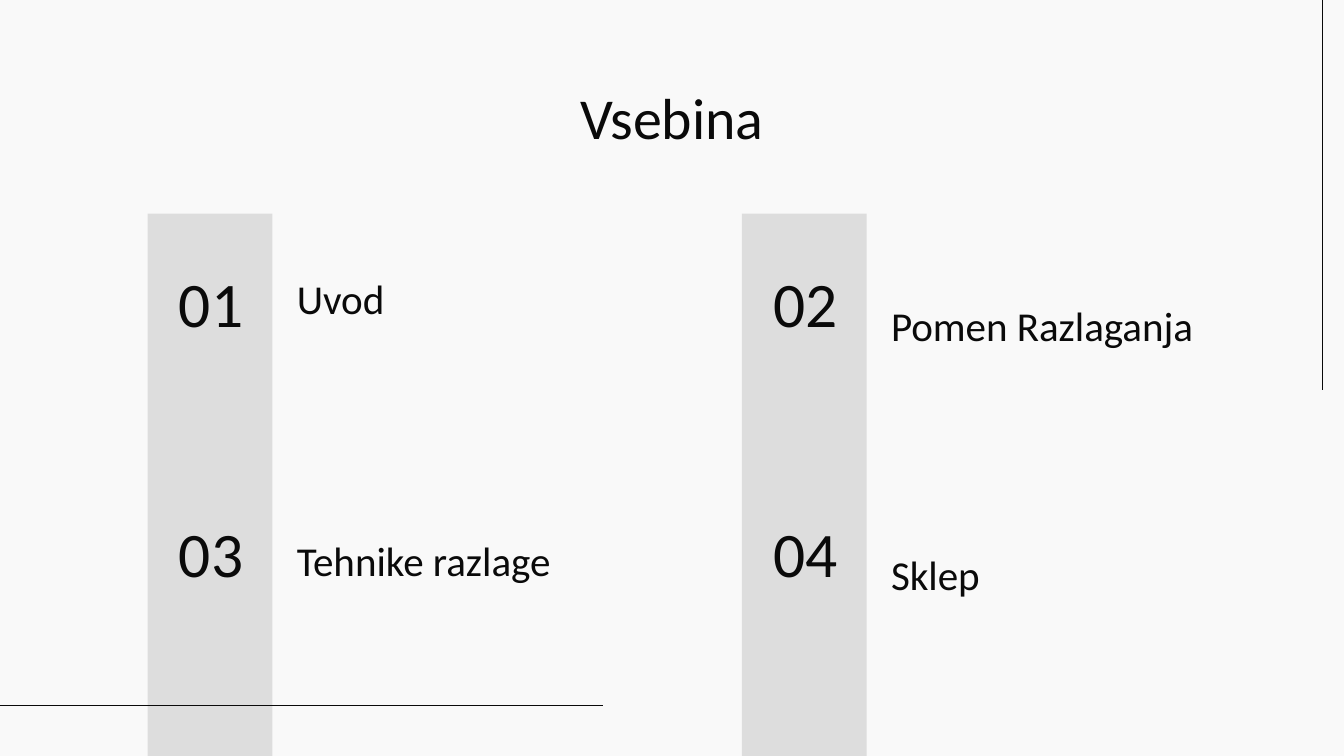
import pptx
import pptx.dml.color
import pptx.enum.shapes
import pptx.enum.text
import pptx.oxml.ns
import pptx.util
from lxml import etree

Cm, Pt = pptx.util.Cm, pptx.util.Pt
ALIGN = pptx.enum.text.PP_ALIGN
ANCHOR = pptx.enum.text.MSO_ANCHOR

COLORS = {"background": "F9F9F9", "bar": "DDDDDD", "ink": "0A0A0A"}
FONT = "Calibri"
SLIDE_W, SLIDE_H = 25.4, 14.29
COLUMNS = (2.77, 14.0)
ROWS = (4.11, 8.84)
LABEL_WIDTHS = (7.52, 6.35)

# Label and its top edge, in reading order
ITEMS = [
    ("Uvod", 4.11),
    ("Pomen Razlaganja", 4.62),
    ("Tehnike razlage", 9.07),
    ("Sklep", 9.32),
]


def rgb(name):
    return pptx.dml.color.RGBColor.from_string(COLORS[name])


def set_text(sp, text, size, align, anchor):
    tf = sp.text_frame
    tf.word_wrap = True
    tf.auto_size = pptx.enum.text.MSO_AUTO_SIZE.NONE
    tf.vertical_anchor = anchor
    tf.margin_left = tf.margin_right = Cm(0.25)
    tf.margin_top = tf.margin_bottom = Cm(0.25)
    p = tf.paragraphs[0]
    p.text = text
    p.alignment = align
    p.line_spacing = 1.0
    p.space_before = Pt(0)
    p.font.name = FONT
    p.font.size = Pt(size)
    p.font.color.rgb = rgb("ink")


def add_title(s, text):
    sp = s.shapes.title
    sp.left, sp.top, sp.width, sp.height = Cm(1.98), Cm(1.3), Cm(21.44), Cm(1.52)
    set_text(sp, text, 31, ALIGN.CENTER, ANCHOR.TOP)


def add_text(s, box, text, size, align, anchor):
    sp = s.shapes.add_textbox(*map(Cm, box))
    set_text(sp, text, size, align, anchor)


def add_bar(s, left):
    top = 4.04
    sp = s.shapes.add_shape(
        pptx.enum.shapes.MSO_SHAPE.RECTANGLE,
        Cm(left), Cm(top), Cm(2.36), Cm(SLIDE_H - top))
    sp.shadow.inherit = False
    sp.fill.solid()
    sp.fill.fore_color.rgb = rgb("bar")
    sp.line.fill.background()


def add_line(s, x1, y1, x2, y2):
    line = s.shapes.add_connector(
        pptx.enum.shapes.MSO_CONNECTOR.STRAIGHT, Cm(x1), Cm(y1), Cm(x2), Cm(y2))
    line.line.color.rgb = rgb("ink")
    line.line.width = Pt(0.75)
    etree.SubElement(line._element.spPr, pptx.oxml.ns.qn("a:effectLst"))


def main():
    prs = pptx.Presentation()
    prs.slide_width, prs.slide_height = Cm(SLIDE_W), Cm(SLIDE_H)
    s = prs.slides.add_slide(prs.slide_layouts[5])
    s.background.fill.solid()
    s.background.fill.fore_color.rgb = rgb("background")

    # Column bars and accent lines
    for left in COLUMNS:
        add_bar(s, left + 0.02)
    add_line(s, 24.99, 7.37, 24.99, 0)
    add_line(s, 0, 13.34, 11.4, 13.34)

    # Heading and numbered contents
    add_title(s, "Vsebina")
    for i, (label, label_top) in enumerate(ITEMS):
        row, col = divmod(i, len(COLUMNS))
        left = COLUMNS[col]
        add_text(s, (left, ROWS[row], 2.44, 3.2), f"{i + 1:02d}", 34,
                 ALIGN.CENTER, ANCHOR.MIDDLE)
        add_text(s, (left + 2.59, label_top, LABEL_WIDTHS[col], 2.24), label, 22,
                 ALIGN.LEFT, ANCHOR.BOTTOM)

    prs.save("out.pptx")


if __name__ == "__main__":
    main()
